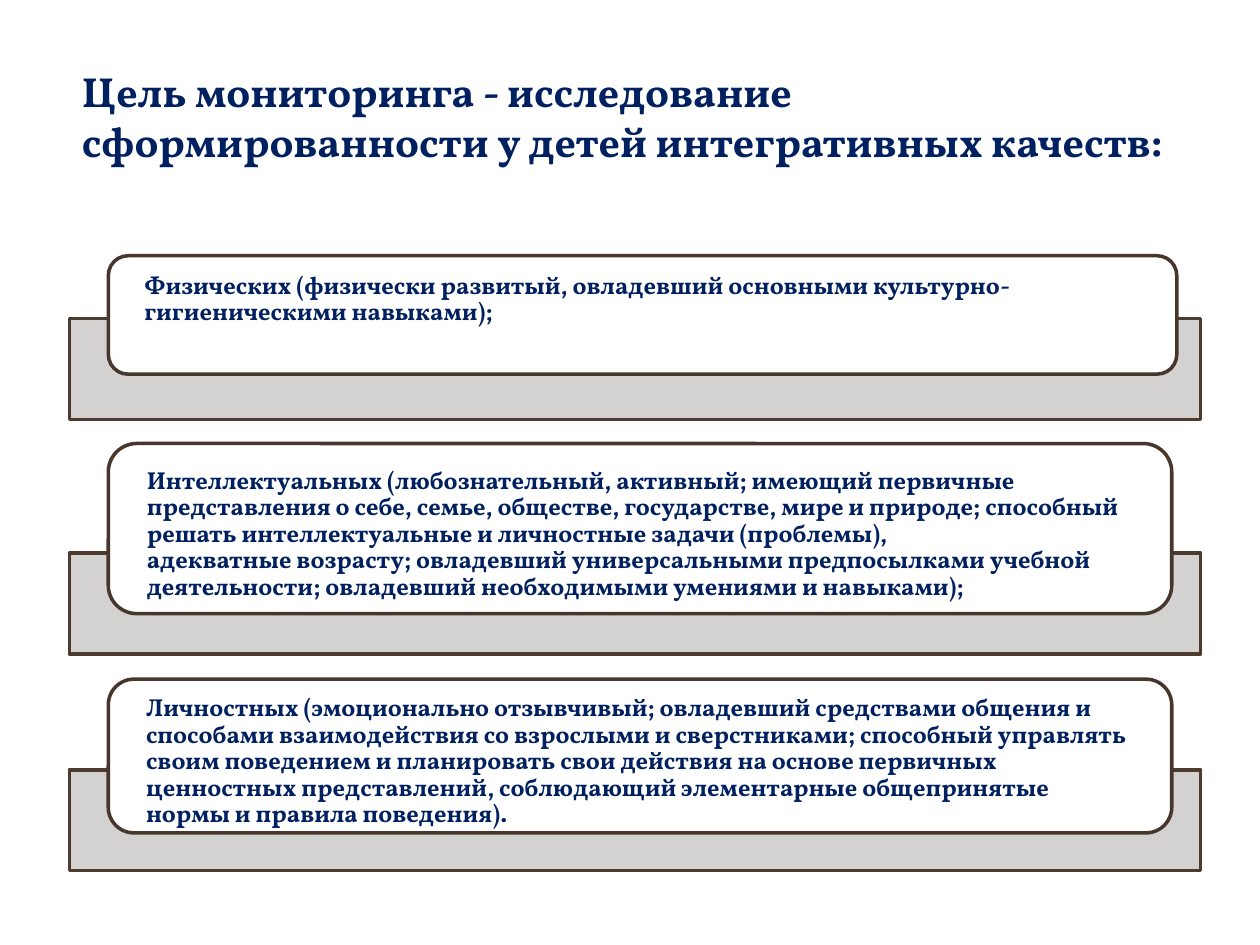
from lxml.etree import SubElement
from pptx import Presentation
from pptx.dml.color import RGBColor
from pptx.enum.shapes import MSO_SHAPE as Shape
from pptx.enum.text import MSO_ANCHOR as Anchor, MSO_AUTO_SIZE as AutoSize, PP_ALIGN as Align
from pptx.oxml.ns import qn
from pptx.util import Inches, Pt

NAVY = "002060"
TITLE = "Цель мониторинга - исследование сформированности у детей интегративных качеств:"
BAR = {"left": 0.55, "width": 8.98, "height": 0.8}
CARD_LEFT = 0.86
QUALITIES = [
    {"bar_top": 2.53, "card_top": 2.03, "width": 8.48, "height": 0.94, "inset": 0.09,
     "text": "Физических (физически развитый, овладевший основными "
             "культурно-гигиеническими навыками);"},
    {"bar_top": 4.39, "card_top": 3.52, "width": 8.44, "height": 1.35, "inset": 0.13,
     "text": "Интеллектуальных (любознательный, активный; имеющий первичные представления "
             "о себе, семье, обществе, государстве, мире и природе; способный решать "
             "интеллектуальные и личностные задачи (проблемы),\n"
             "адекватные возрасту; овладевший универсальными предпосылками учебной "
             "деятельности; овладевший необходимыми умениями и навыками);"},
    {"bar_top": 6.11, "card_top": 5.39, "width": 8.44, "height": 1.22, "inset": 0.07,
     "text": "Личностных (эмоционально отзывчивый; овладевший средствами общения и "
             "способами взаимодействия со взрослыми и сверстниками; способный управлять "
             "своим поведением и планировать свои действия на основе первичных ценностных "
             "представлений, соблюдающий элементарные общепринятые нормы и правила поведения)."},
]


def color(value):
    """Return the colour for a hex string."""
    return RGBColor.from_string(value)


def apply(target, values):
    """Set attributes of an object from a dict."""
    for name, value in values.items():
        setattr(target, name, value)


def write_text(shape, text, size, frame_values, line_spacing=1.0):
    """Put bold navy text at the top left of a shape."""
    frame = shape.text_frame
    apply(frame, {"word_wrap": True, "auto_size": AutoSize.NONE,
                  "vertical_anchor": Anchor.TOP, **frame_values})
    paragraph = frame.paragraphs[0]
    paragraph.text = text
    apply(paragraph, {"alignment": Align.LEFT, "line_spacing": line_spacing})
    for run in paragraph.runs:
        apply(run.font, {"name": "Vollkorn", "size": Pt(size), "bold": True})
        run.font.color.rgb = color(NAVY)


def add_box(slide, kind, box, fill, line):
    """Add an outlined, filled shape without a shadow."""
    shape = slide.shapes.add_shape(kind, *map(Inches, box))
    shape.shadow.inherit = False
    shape.fill.solid()
    shape.fill.fore_color.rgb = color(fill)
    shape.line.color.rgb = color(line)
    shape.line.width = Pt(2)
    return shape


def set_opacity(shape, percent):
    """Set the opacity of a solid fill."""
    fill_color = shape.fill._xPr.find(qn("a:solidFill"))[0]
    SubElement(fill_color, qn("a:alpha")).set("val", str(percent * 1000))


def add_title(slide, text):
    """Place and format the title."""
    title = slide.shapes.title
    apply(title, {"left": Inches(0.55), "top": Inches(0.47),
                  "width": Inches(8.83), "height": Inches(1.72)})
    write_text(title, text, 24, {})


def add_quality(slide, quality):
    """Add a grey bar with a rounded text card over it."""
    bar_box = BAR["left"], quality["bar_top"], BAR["width"], BAR["height"]
    set_opacity(add_box(slide, Shape.RECTANGLE, bar_box, "D0CECD", "4E3B30"), 90)
    card_box = CARD_LEFT, quality["card_top"], quality["width"], quality["height"]
    card = add_box(slide, Shape.ROUNDED_RECTANGLE, card_box, "FFFFFF", "47362C")
    insets = {"margin_left": Inches(0.24), "margin_right": Inches(0.24),
              "margin_top": Inches(quality["inset"]), "margin_bottom": 0}
    write_text(card, quality["text"], 14, insets, 0.9)


def main():
    """Build and save the presentation."""
    presentation = Presentation()
    apply(presentation, {"slide_width": Inches(10), "slide_height": Inches(7.5)})
    slide = presentation.slides.add_slide(presentation.slide_layouts[5])
    add_title(slide, TITLE)
    for quality in QUALITIES:
        add_quality(slide, quality)
    presentation.save("out.pptx")


if __name__ == "__main__":
    main()
